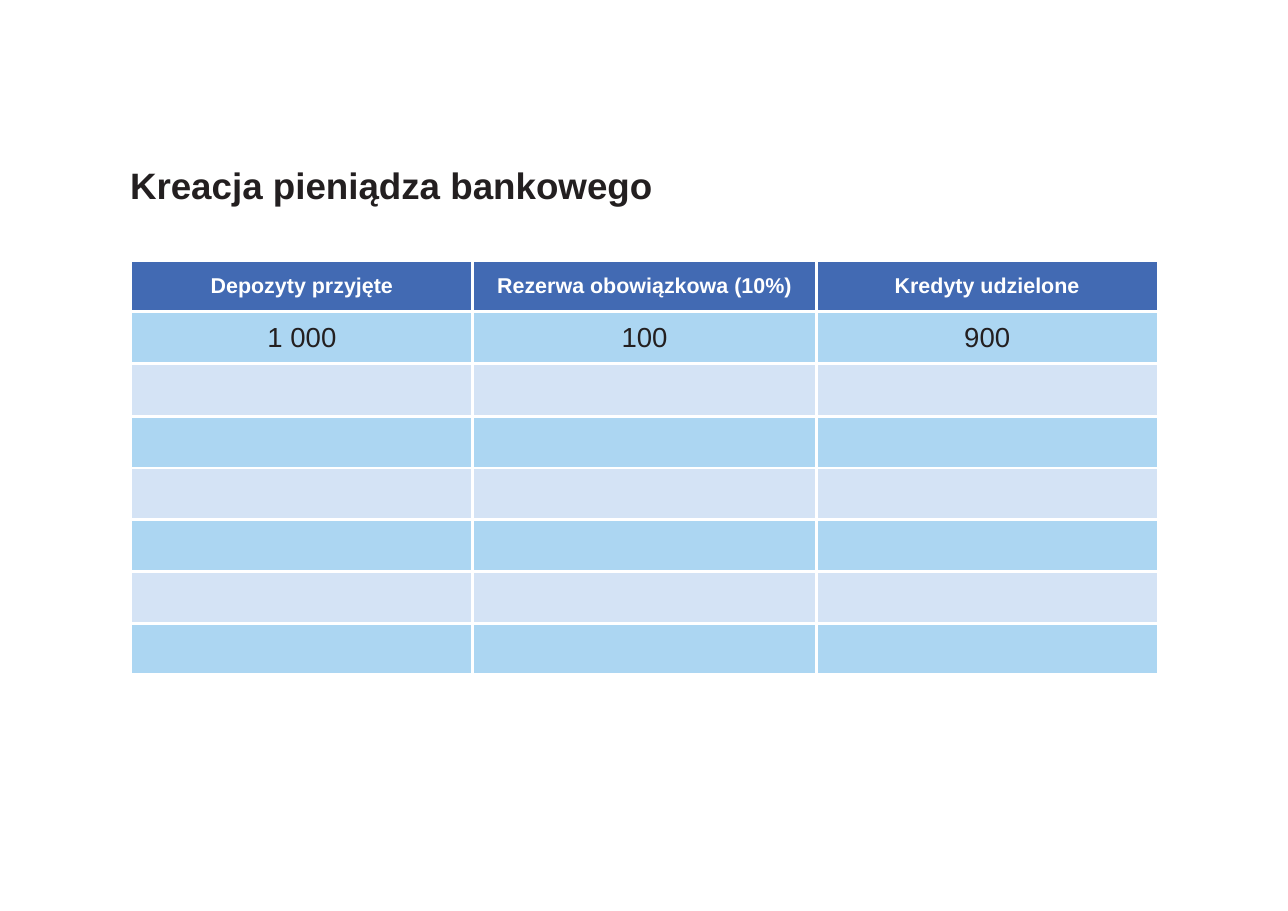
"""Build a slide with a table on the creation of bank money."""
from lxml import etree
from pptx import Presentation
from pptx.dml.color import RGBColor
from pptx.enum.text import MSO_ANCHOR, PP_ALIGN
from pptx.oxml.ns import qn
from pptx.util import Inches, Pt

LEFT, CENTER = PP_ALIGN.LEFT, PP_ALIGN.CENTER
MIDDLE = MSO_ANCHOR.MIDDLE
WHITE, INK, HEADER_BLUE = "FFFFFF", "231F20", "426AB3"
BAND_COLORS = ("ACD6F2", "D4E3F5")

TITLE_FORMAT = {"name": "Arial", "size": Pt(24), "bold": True}
HEADER_FORMAT = {"name": "Arial", "size": Pt(14), "bold": True}
BODY_FORMAT = {"name": "Arial", "size": Pt(18), "bold": False}
NO_MARGINS = dict.fromkeys(
    ("margin_left", "margin_top", "margin_right", "margin_bottom"), 0)

COLUMN_WIDTHS = (3.1, 3.12, 3.1)
ROW_HEIGHTS = (0.46, 0.47, 0.48, 0.47, 0.47, 0.47, 0.47, 0.46)
HEADERS = ("Depozyty przyjęte", "Rezerwa obowiązkowa (10%)", "Kredyty udzielone")
FIRST_DEPOSIT = ("1 000", "100", "900")


def rgb(color):
    """Return the colour for a hex string."""
    return RGBColor.from_string(color)


def set_values(target, values):
    """Set each named attribute of the target."""
    for name, value in values.items():
        setattr(target, name, value)


def write_text(text_frame, text, font_format, color, alignment):
    """Write one formatted paragraph."""
    paragraph = text_frame.paragraphs[0]
    paragraph.text = text
    paragraph.alignment = alignment
    set_values(paragraph.font, font_format)
    paragraph.font.color.rgb = rgb(color)


def add_title(slide, text):
    """Add the slide title."""
    shape = slide.shapes.add_textbox(
        Inches(1.18), Inches(1.48), Inches(9.35), Inches(0.41))
    set_values(shape.text_frame, {**NO_MARGINS, "word_wrap": True})
    write_text(shape.text_frame, text, TITLE_FORMAT, INK, LEFT)


def add_borders(cell, sides):
    """Draw white lines on the given sides of a cell."""
    properties = cell._tc.get_or_add_tcPr()
    for position, side in enumerate(sides):
        line = etree.Element(qn(f"a:ln{side}"), w=str(Pt(2)))
        fill = etree.SubElement(line, qn("a:solidFill"))
        etree.SubElement(fill, qn("a:srgbClr"), val=WHITE)
        properties.insert(position, line)


def inner_sides(row, column):
    """Return the sides of a cell that touch another cell."""
    touching = {"L": column > 0, "R": column < len(COLUMN_WIDTHS) - 1,
                "T": row > 0, "B": row < len(ROW_HEIGHTS) - 1}
    return [side for side, touches in touching.items() if touches]


def format_cell(cell, text, row, column):
    """Fill, border and write one table cell."""
    set_values(cell, {**NO_MARGINS, "vertical_anchor": MIDDLE})
    is_header = row == 0
    cell.fill.solid()
    cell.fill.fore_color.rgb = rgb(
        HEADER_BLUE if is_header else BAND_COLORS[(row - 1) % 2])
    add_borders(cell, inner_sides(row, column))
    write_text(cell.text_frame, text, HEADER_FORMAT if is_header else BODY_FORMAT,
               WHITE if is_header else INK, CENTER)


def add_money_table(slide):
    """Add the table of deposits, reserves and loans."""
    table = slide.shapes.add_table(
        len(ROW_HEIGHTS), len(COLUMN_WIDTHS), Inches(1.19), Inches(2.37),
        Inches(sum(COLUMN_WIDTHS)), Inches(sum(ROW_HEIGHTS))).table
    for column, width in zip(table.columns, COLUMN_WIDTHS):
        column.width = Inches(width)
    for row, height in zip(table.rows, ROW_HEIGHTS):
        row.height = Inches(height)
    empty_row = ("",) * len(COLUMN_WIDTHS)
    contents = [HEADERS, FIRST_DEPOSIT] + [empty_row] * (len(ROW_HEIGHTS) - 2)
    for row, texts in enumerate(contents):
        for column, text in enumerate(texts):
            format_cell(table.cell(row, column), text, row, column)


def main():
    """Build and save the presentation."""
    presentation = Presentation()
    presentation.slide_width = Inches(11.69)
    presentation.slide_height = Inches(8.27)
    slide = presentation.slides.add_slide(presentation.slide_layouts[6])
    add_title(slide, "Kreacja pieniądza bankowego")
    add_money_table(slide)
    presentation.save("out.pptx")


if __name__ == "__main__":
    main()
